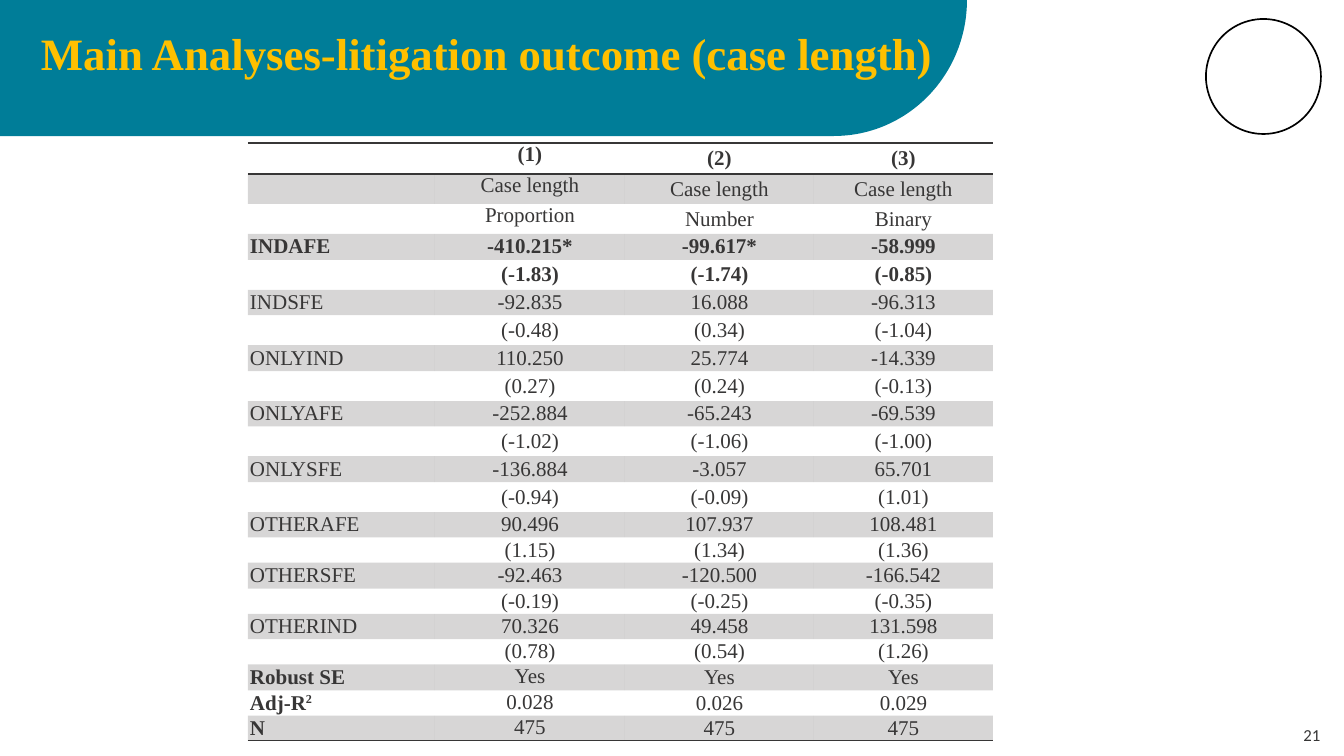
from math import cos, pi, sin

from lxml.etree import SubElement
from pptx import Presentation
from pptx.dml.color import RGBColor
from pptx.enum.shapes import MSO_SHAPE
from pptx.enum.text import MSO_ANCHOR, PP_ALIGN
from pptx.oxml.ns import qn
from pptx.util import Pt

# Content
TITLE = "Main Analyses-litigation outcome (case length)"
NUMBER = "21"
ROWS = [
    ("", "(1)", "(2)", "(3)"),
    ("", "Case length", "Case length", "Case length"),
    ("", "Proportion", "Number", "Binary"),
    ("INDAFE", "-410.215*", "-99.617*", "-58.999"),
    ("", "(-1.83)", "(-1.74)", "(-0.85)"),
    ("INDSFE", "-92.835", "16.088", "-96.313"),
    ("", "(-0.48)", "(0.34)", "(-1.04)"),
    ("ONLYIND", "110.250", "25.774", "-14.339"),
    ("", "(0.27)", "(0.24)", "(-0.13)"),
    ("ONLYAFE", "-252.884", "-65.243", "-69.539"),
    ("", "(-1.02)", "(-1.06)", "(-1.00)"),
    ("ONLYSFE", "-136.884", "-3.057", "65.701"),
    ("", "(-0.94)", "(-0.09)", "(1.01)"),
    ("OTHERAFE", "90.496", "107.937", "108.481"),
    ("", "(1.15)", "(1.34)", "(1.36)"),
    ("OTHERSFE", "-92.463", "-120.500", "-166.542"),
    ("", "(-0.19)", "(-0.25)", "(-0.35)"),
    ("OTHERIND", "70.326", "49.458", "131.598"),
    ("", "(0.78)", "(0.54)", "(1.26)"),
    ("Robust SE", "Yes", "Yes", "Yes"),
    ("Adj-R^2", "0.028", "0.026", "0.029"),
    ("N", "475", "475", "475"),
]
BOLD = {0, 3, 4}  # rows set fully in bold
FOOT = 19  # first summary row
LAST = len(ROWS) - 1

# Layout in px
PX = 914400 / 100.8
WIDE, HIGH = 1344, 756
BAND = (967, 136, 133)  # width, height, corner
COLS = [187, 190, 189, 179]
TALL = [31, 30, 30] + [26, 30, 25, 30] * 2 + [26, 30] + [25, 25, 26, 25] * 2 + [25]

THEME = {
    "teal": "007D98", "gold": "FFC000", "ink": "373636", "black": "000000",
    "serif": "Times New Roman", "sans": "Calibri",
    "title": 32, "cell": 15, "page": 12, "tint": 20000,
}
PLAIN = "{2D5ABB26-0587-4C30-8999-92F81FD0307C}"


def px(*vals):
    return [round(v * PX) for v in vals]


def color(name):
    return RGBColor.from_string(THEME[name])


def style(run, face, size, ink, bold=False):
    look = {"name": THEME[face], "size": Pt(THEME[size]), "bold": bold}
    for key, val in look.items():
        setattr(run.font, key, val)
    run.font.color.rgb = color(ink)


def label(text, place, face, size, ink, bold=False, **look):
    frame = slide.shapes.add_textbox(*px(*place)).text_frame
    frame.word_wrap = True
    frame.vertical_anchor = look.pop("anchor", MSO_ANCHOR.TOP)
    para = frame.paragraphs[0]
    for key, val in look.items():
        setattr(para, key, val)
    run = para.add_run()
    run.text = text
    style(run, face, size, ink, bold)


def rule(cell, side):
    line = SubElement(cell._tc.get_or_add_tcPr(), qn("a:" + side), w=str(Pt(1)))
    fill = SubElement(line, qn("a:solidFill"))
    SubElement(fill, qn("a:srgbClr"), val=THEME["ink"])


def shade(cell):
    cell.fill.solid()
    cell.fill.fore_color.rgb = color("ink")
    tone = cell._tc.tcPr.find(".//" + qn("a:solidFill") + "[last()]/" + qn("a:srgbClr"))
    for fill in cell._tc.tcPr.findall(qn("a:solidFill")):
        tone = fill[0]
    SubElement(tone, qn("a:alpha"), val=str(THEME["tint"]))


def write(cell, text, row, col):
    top = col == 1 and (row < 3 or row >= FOOT)
    look = {
        "margin_left": px(2)[0], "margin_right": px(2)[0],
        "margin_top": 0, "margin_bottom": 0,
        "vertical_anchor": MSO_ANCHOR.TOP if top else MSO_ANCHOR.MIDDLE,
    }
    for key, val in look.items():
        setattr(cell, key, val)
    para = cell.text_frame.paragraphs[0]
    if not text:
        SubElement(para._p, qn("a:endParaRPr"), sz=str(THEME["cell"] * 100))
        return
    para.alignment = PP_ALIGN.CENTER if col else PP_ALIGN.LEFT
    bold = row in BOLD or (row >= FOOT and col == 0)
    for step, part in enumerate(text.split("^")):
        run = para.add_run()
        run.text = part
        style(run, "serif", "cell", "ink", bold)
        if step:  # raised part
            run._r.get_or_add_rPr().set("baseline", "30000")


deck = Presentation()
deck.slide_width, deck.slide_height = px(WIDE, HIGH)
slide = deck.slides.add_slide(deck.slide_layouts[6])

# Banner with one round corner
wide, high, bend = BAND
arc = [(wide - bend + bend * cos(i * pi / 96), high * sin(i * pi / 96)) for i in range(49)]
path = slide.shapes.build_freeform(0, 0, scale=1.0)
path.add_line_segments([px(*spot) for spot in arc + [(0, high)]])
banner = path.convert_to_shape()
banner.shadow.inherit = False
banner.fill.solid()
banner.fill.fore_color.rgb = color("teal")
banner.line.fill.background()

# Ring
ring = slide.shapes.add_shape(MSO_SHAPE.OVAL, *px(1206, 19, 115, 115))
ring.shadow.inherit = False
ring.fill.background()
ring.line.color.rgb = color("black")
ring.line.width = Pt(1.2)

# Page number and title
label(NUMBER, (1280, 721, 64, 27), "sans", "page", "ink",
      anchor=MSO_ANCHOR.MIDDLE, alignment=PP_ALIGN.CENTER)
label(TITLE, (31, 27, 1159, 93), "serif", "title", "gold", True, line_spacing=0.9)

# Results table
grid = slide.shapes.add_table(len(ROWS), len(COLS), *px(248, 143, sum(COLS), sum(TALL))).table
grid.first_row = grid.horz_banding = False
grid._tbl.tblPr.find(qn("a:tableStyleId")).text = PLAIN
for col, size in zip(grid.columns, COLS):
    col.width = px(size)[0]
for line, size in zip(grid.rows, TALL):
    line.height = px(size)[0]
for row, texts in enumerate(ROWS):
    for col, text in enumerate(texts):
        cell = grid.cell(row, col)
        write(cell, text, row, col)
        if row == 0:
            rule(cell, "lnT")
        if row in (0, LAST):
            rule(cell, "lnB")
        if row % 2:
            shade(cell)
        else:
            cell.fill.background()

deck.save("out.pptx")
